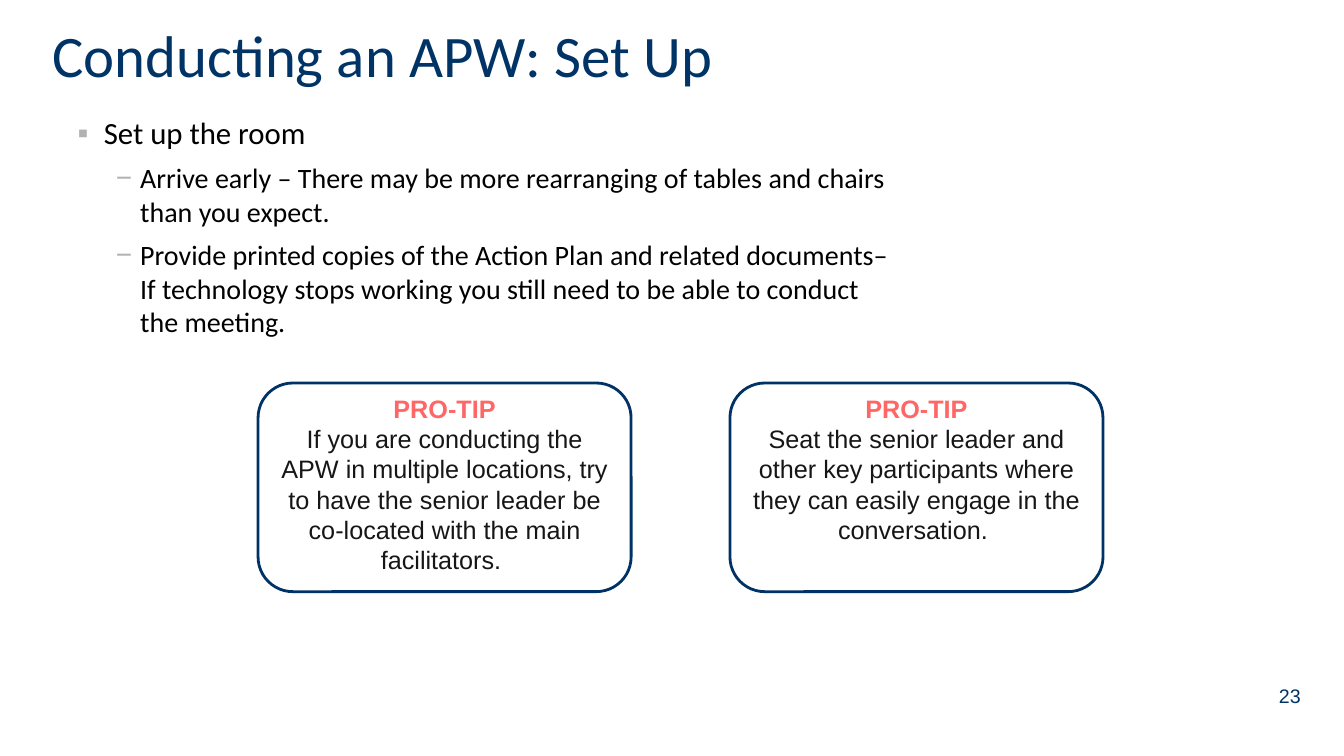
from dataclasses import dataclass

from lxml import etree
from pptx import Presentation
from pptx.dml.color import RGBColor
from pptx.enum.shapes import MSO_SHAPE
from pptx.enum.text import MSO_ANCHOR, MSO_AUTO_SIZE, PP_ALIGN
from pptx.oxml.ns import qn
from pptx.util import Inches, Pt

LEFT, CENTER, RIGHT = PP_ALIGN.LEFT, PP_ALIGN.CENTER, PP_ALIGN.RIGHT
TOP, MIDDLE = MSO_ANCHOR.TOP, MSO_ANCHOR.MIDDLE
NO_FIT, GROW = MSO_AUTO_SIZE.NONE, MSO_AUTO_SIZE.SHAPE_TO_FIT_TEXT
ROUNDED = MSO_SHAPE.ROUNDED_RECTANGLE

# Content
TITLE = "Conducting an APW: Set Up"
PAGE_NUMBER = "23"
STEPS = [  # (level, text)
    (0, "Set up the room"),
    (1, "Arrive early – There may be more rearranging of tables and chairs "
        "than you expect."),
    (1, "Provide printed copies of the Action Plan and related documents– "
        "If technology stops working you still need to be able to conduct "
        "the meeting."),
]
TIP_HEADING = "PRO-TIP"
TIPS = [
    "If you are conducting the APW in multiple locations, try to have the "
    "senior leader be co-located with the main facilitators.\u00a0",
    "Seat the senior leader and other key participants where they can easily "
    "engage in the conversation. ",
]


@dataclass(frozen=True)
class Theme:
    heading_font: str = "Calibri"
    tip_font: str = "Arial"
    navy: str = "003366"
    border: str = "003265"
    coral: str = "FF6666"
    ink: str = "161616"
    black: str = "000000"
    white: str = "FFFFFF"
    bullet: str = "B2B2B2"
    title_size: int = 42
    tip_size: int = 18
    number_size: int = 14


THEME = Theme()

# Per level: bullet, text size, space before, left margin, hanging indent
LEVELS = [("▪", 22, 15, 0.26, 0.26), ("−", 20, 7, 0.62, 0.24)]

# Tip box geometry
TIP_LEFT, TIP_TOP, TIP_WIDTH, TIP_HEIGHT, TIP_GAP = 2.56, 3.8, 3.7, 2.07, 0.98


def write(paragraph, text, *, size, font, color, bold=False, align=LEFT):
    paragraph.alignment = align
    run = paragraph.add_run()
    run.text = text
    run.font.size = Pt(size)
    run.font.name = font
    run.font.bold = bold
    run.font.color.rgb = RGBColor.from_string(color)


def place(shape, left, top, width, height):
    shape.left, shape.top = Inches(left), Inches(top)
    shape.width, shape.height = Inches(width), Inches(height)


def set_frame(frame, anchor, fit=NO_FIT):
    frame.word_wrap = True
    frame.auto_size = fit
    frame.vertical_anchor = anchor


def set_bullet(paragraph, char, margin, hanging):
    props = paragraph._p.get_or_add_pPr()
    props.set("marL", str(Inches(margin)))
    props.set("indent", str(-Inches(hanging)))
    color = etree.SubElement(props, qn("a:buClr"))
    etree.SubElement(color, qn("a:srgbClr"), val=THEME.bullet)
    etree.SubElement(props, qn("a:buFont"), typeface="Arial")
    etree.SubElement(props, qn("a:buChar"), char=char)


def add_steps(body):
    set_frame(body.text_frame, TOP)
    for index, (level, text) in enumerate(STEPS):
        char, size, before, margin, hanging = LEVELS[level]
        step = (body.text_frame.add_paragraph() if index
                else body.text_frame.paragraphs[0])
        step.level = level
        step.space_before = Pt(before)
        set_bullet(step, char, margin, hanging)
        write(step, text, size=size, font=THEME.heading_font, color=THEME.black)


def add_tip(slide, left, text):
    tip = slide.shapes.add_shape(ROUNDED, Inches(left), Inches(TIP_TOP),
                                 Inches(TIP_WIDTH), Inches(TIP_HEIGHT))
    tip.shadow.inherit = False
    tip.fill.solid()
    tip.fill.fore_color.rgb = RGBColor.from_string(THEME.white)
    tip.line.color.rgb = RGBColor.from_string(THEME.border)
    tip.line.width = Pt(2)
    frame = tip.text_frame
    set_frame(frame, TOP, GROW)
    frame.margin_top = 0
    write(frame.paragraphs[0], TIP_HEADING, size=THEME.tip_size,
          font=THEME.tip_font, color=THEME.coral, bold=True, align=CENTER)
    write(frame.add_paragraph(), text, size=THEME.tip_size,
          font=THEME.tip_font, color=THEME.ink, align=CENTER)


def main():
    deck = Presentation()
    deck.slide_width, deck.slide_height = Inches(13.33), Inches(7.5)
    slide = deck.slides.add_slide(deck.slide_layouts[1])

    # Title
    title = slide.shapes.title
    place(title, 0.42, 0.08, 12.5, 0.92)
    set_frame(title.text_frame, MIDDLE)
    write(title.text_frame.paragraphs[0], TITLE, size=THEME.title_size,
          font=THEME.heading_font, color=THEME.navy)

    # Set-up steps
    body = slide.placeholders[1]
    place(body, 0.67, 1.08, 8.25, 5.69)
    add_steps(body)

    # Tip boxes
    for index, text in enumerate(TIPS):
        add_tip(slide, TIP_LEFT + index * (TIP_WIDTH + TIP_GAP), text)

    # Page number
    number = slide.shapes.add_textbox(Inches(9.89), Inches(6.74),
                                      Inches(3.11), Inches(0.52))
    set_frame(number.text_frame, TOP)
    write(number.text_frame.paragraphs[0], PAGE_NUMBER, size=THEME.number_size,
          font=THEME.tip_font, color=THEME.navy, align=RIGHT)

    deck.save("out.pptx")


if __name__ == "__main__":
    main()
